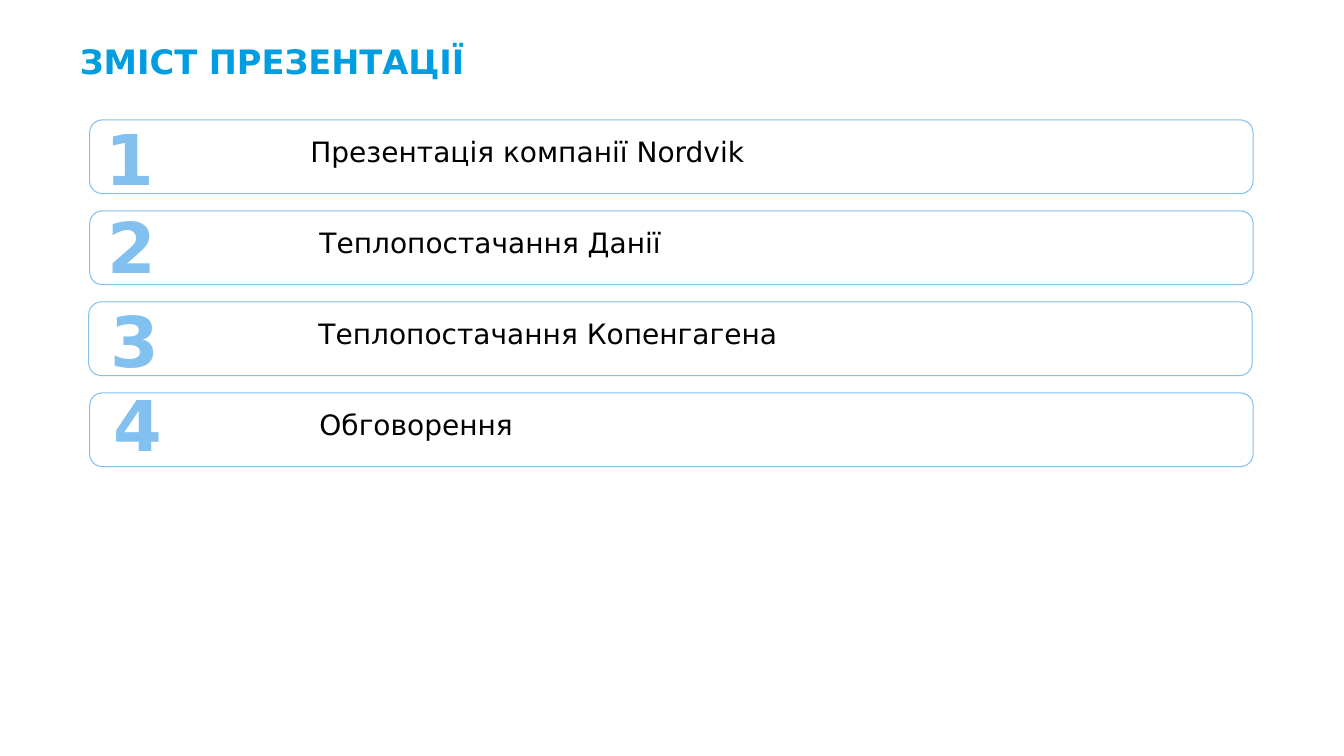
from pptx import Presentation
from pptx.dml.color import RGBColor
from pptx.enum import shapes, text
from pptx.util import Pt

TITLE_BLUE = RGBColor(0x00, 0x9D, 0xE0)
PALE_BLUE = RGBColor(0x82, 0xC0, 0xF0)
BLACK = RGBColor(0, 0, 0)


def write(box, wording, size, color, bold, insets, align=text.PP_ALIGN.LEFT):
    frame = box.text_frame
    frame.word_wrap = True
    frame.vertical_anchor = text.MSO_ANCHOR.TOP
    frame.margin_left, frame.margin_top, frame.margin_right, frame.margin_bottom = map(Pt, insets)
    frame.text = wording
    line = frame.paragraphs[0]
    line.alignment = align
    font = line.runs[0].font
    font.name = "DejaVu Sans"
    font.size = Pt(size)
    font.bold = bold
    font.color.rgb = color
    return line


deck = Presentation()
deck.slide_width, deck.slide_height = Pt(960), Pt(540)
slide = deck.slides.add_slide(deck.slide_layouts[6])

agenda = [
    ("Презентація компанії Nordvik", 64.1, 155, 45.4, 85.7),
    ("Теплопостачання Данії", 64.1, 161.5, 46.8, 148.3),
    ("Теплопостачання Копенгагена", 63.4, 161.5, 49, 216),
    ("Обговорення", 64.1, 161.5, 51.1, 275.8),
]
for index, (topic, left, indent, number_left, number_top) in enumerate(agenda):
    bar = slide.shapes.add_shape(
        shapes.MSO_SHAPE.ROUNDED_RECTANGLE,
        Pt(left), Pt(85.7 + 65 * index), Pt(831), Pt(52.6))
    bar.adjustments[0] = 0.17
    bar.shadow.inherit = False
    bar.fill.background()
    bar.line.color.rgb = PALE_BLUE
    bar.line.width = Pt(0.75)
    write(bar, topic, 20, BLACK, False, (indent, 8, 78, 0))

    number = slide.shapes.add_textbox(Pt(number_left), Pt(number_top), Pt(72), Pt(70.6))
    numeral = write(number, str(index + 1), 50, PALE_BLUE, True,
                    (7.2, 3.6, 7.2, 3.6), text.PP_ALIGN.RIGHT)
    numeral.line_spacing = 0.9

title = slide.shapes.add_textbox(Pt(57), Pt(26), Pt(831.6), Pt(59))
write(title, "ЗМІСТ ПРЕЗЕНТАЦІЇ", 24, TITLE_BLUE, True, (0, 3.5, 0, 0))

deck.save("out.pptx")
